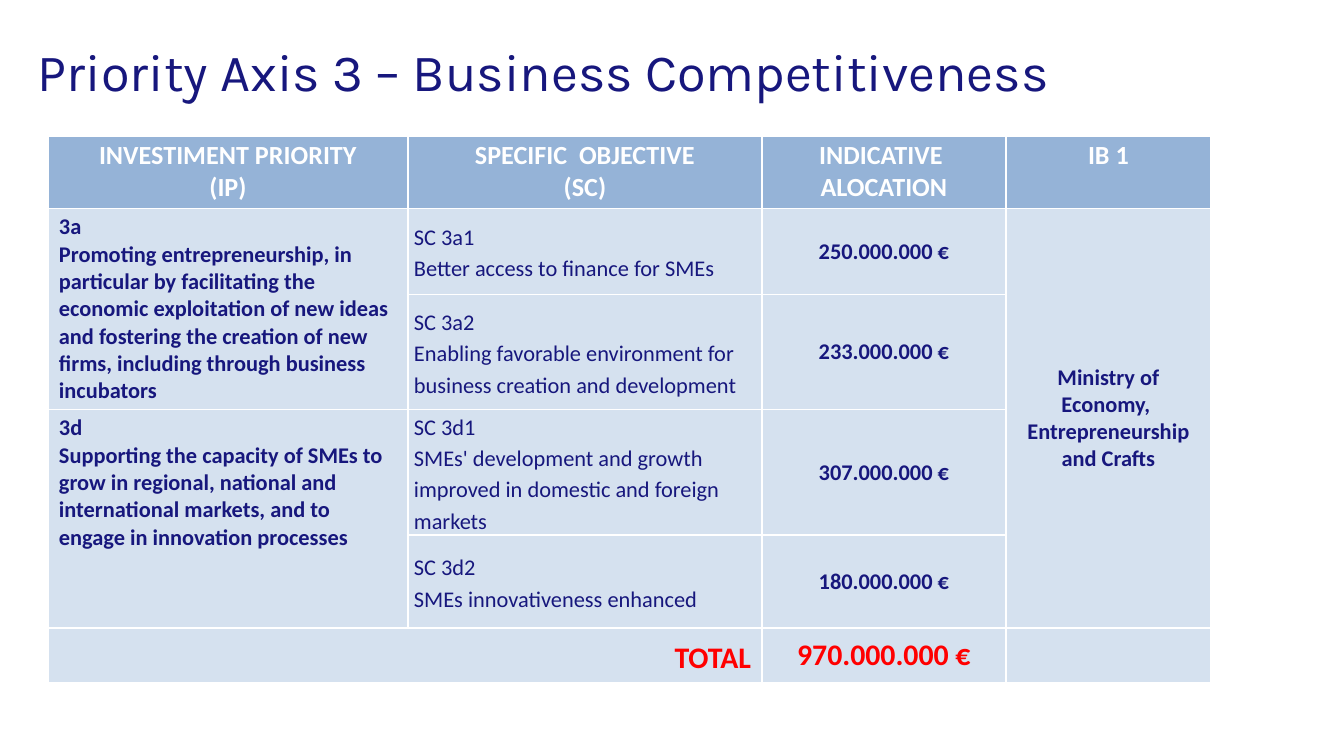
from dataclasses import dataclass

from lxml.etree import SubElement
from pptx import Presentation
from pptx.dml.color import RGBColor
from pptx.enum.text import MSO_ANCHOR, PP_ALIGN
from pptx.oxml.ns import qn
from pptx.util import Emu, Pt


@dataclass(frozen=True)
class Theme:
    navy: str = "17177D"
    white: str = "FFFFFF"
    red: str = "FF0000"
    head: str = "95B3D7"
    body: str = "B9CDE5"
    opacity: int = 60
    title_font: str = "Karla"
    font: str = "Calibri"
    title: int = 28
    header: int = 14
    text: int = 12
    total: int = 16


@dataclass(frozen=True)
class Style:
    size: int
    color: str
    bold: bool = True
    align: PP_ALIGN = PP_ALIGN.LEFT
    anchor: MSO_ANCHOR = MSO_ANCHOR.MIDDLE
    inset: tuple = (11, 5)
    spacing: float = 1.0


THEME = Theme()
HEADER = Style(THEME.header, THEME.white, align=PP_ALIGN.CENTER, anchor=MSO_ANCHOR.TOP)
PRIORITY = Style(THEME.text, THEME.navy, anchor=MSO_ANCHOR.TOP)
GOAL = Style(THEME.text, THEME.navy, bold=False, inset=(6, 0), spacing=1.15)
AMOUNT = Style(THEME.text, THEME.navy, align=PP_ALIGN.CENTER)
TOTAL = Style(THEME.total, THEME.red, align=PP_ALIGN.RIGHT, spacing=1.15)
SUM = Style(THEME.total, THEME.red, align=PP_ALIGN.CENTER)

COLS = (360, 354, 244, 205)
ROWS = (72, 86, 115, 125, 93, 53)
HEADERS = (
    "INVESTIMENT PRIORITY\n(IP)",
    "SPECIFIC  OBJECTIVE\n(SC)",
    "INDICATIVE \nALOCATION",
    "IB 1",
)
PRIORITIES = (
    "3a\nPromoting entrepreneurship, in particular by facilitating the economic "
    "exploitation of new ideas and fostering the creation of new firms, "
    "including through business\nincubators",
    "3d\nSupporting the capacity of SMEs to grow in regional, national and "
    "international markets, and to engage in innovation processes",
)
GOALS = (
    ("SC 3a1\nBetter access to finance for SMEs", "250.000.000 €"),
    ("SC 3a2\nEnabling favorable environment for business creation and development",
     "233.000.000 €"),
    ("SC 3d1\nSMEs' development and growth improved in domestic and foreign markets",
     "307.000.000 €"),
    ("SC 3d2\nSMEs innovativeness enhanced", "180.000.000 €"),
)
MINISTRY = "Ministry of Economy,  Entrepreneurship and Crafts"


def px(n):
    return Emu(round(n * 914400 / 134.4))


def set_font(para, name, size, color, bold=False):
    for run in para.runs:
        run.font.name = name
        run.font.size = Pt(size)
        run.font.bold = bold
        run.font.color.rgb = RGBColor.from_string(color)


def add_title(slide, text):
    frame = slide.shapes.add_textbox(px(38), px(39), px(1090), px(63)).text_frame
    frame.word_wrap = True
    frame.margin_left = frame.margin_right = 0
    frame.margin_top = frame.margin_bottom = 0
    frame.text = text
    set_font(frame.paragraphs[0], THEME.title_font, THEME.title, THEME.navy)


def add_edges(cell, top):
    props = cell._tc.get_or_add_tcPr()
    for side, width in (("L", 1), ("R", 1), ("T", top), ("B", 1)):
        line = SubElement(props, qn(f"a:ln{side}"), w=str(Pt(width)))
        fill = SubElement(line, qn("a:solidFill"))
        SubElement(fill, qn("a:srgbClr"), val=THEME.white)


def paint(cell, is_head):
    add_edges(cell, 3 if is_head else 1)
    cell.fill.solid()
    cell.fill.fore_color.rgb = RGBColor.from_string(THEME.head if is_head else THEME.body)
    if not is_head:
        color = cell._tc.tcPr.find(f"{qn('a:solidFill')}/{qn('a:srgbClr')}")
        SubElement(color, qn("a:alpha"), val=str(THEME.opacity * 1000))


def write(cell, text, style):
    cell.vertical_anchor = style.anchor
    cell.margin_left = cell.margin_right = px(style.inset[0])
    cell.margin_top = cell.margin_bottom = px(style.inset[1])
    cell.text_frame.text = text
    for para in cell.text_frame.paragraphs:
        para.alignment = style.align
        para.line_spacing = style.spacing
        set_font(para, THEME.font, style.size, style.color, style.bold)


def add_grid(slide):
    """Add the painted, still empty table."""
    table = slide.shapes.add_table(
        len(ROWS), len(COLS), px(48), px(135), px(sum(COLS)), px(sum(ROWS))
    ).table
    table.first_row = table.horz_banding = False
    for col, width in zip(table.columns, COLS):
        col.width = px(width)
    for i, (row, height) in enumerate(zip(table.rows, ROWS)):
        row.height = px(height)
        for cell in row.cells:
            paint(cell, i == 0)
    return table


def fill_grid(table):
    cell = table.cell
    for col, text in enumerate(HEADERS):
        write(cell(0, col), text, HEADER)
    for i, text in enumerate(PRIORITIES):
        row = 1 + 2 * i
        cell(row, 0).merge(cell(row + 1, 0))
        write(cell(row, 0), text, PRIORITY)
    for row, (goal, amount) in enumerate(GOALS, 1):
        write(cell(row, 1), goal, GOAL)
        write(cell(row, 2), amount, AMOUNT)
    cell(1, 3).merge(cell(4, 3))
    write(cell(1, 3), MINISTRY, AMOUNT)
    cell(5, 0).merge(cell(5, 1))
    write(cell(5, 0), "TOTAL", TOTAL)
    write(cell(5, 2), "970.000.000 €", SUM)


def main():
    deck = Presentation()
    deck.slide_width, deck.slide_height = px(1344), px(756)
    slide = deck.slides.add_slide(deck.slide_layouts[6])
    fill_grid(add_grid(slide))
    add_title(slide, "Priority Axis 3 – Business Competitiveness")
    deck.save("out.pptx")


if __name__ == "__main__":
    main()
